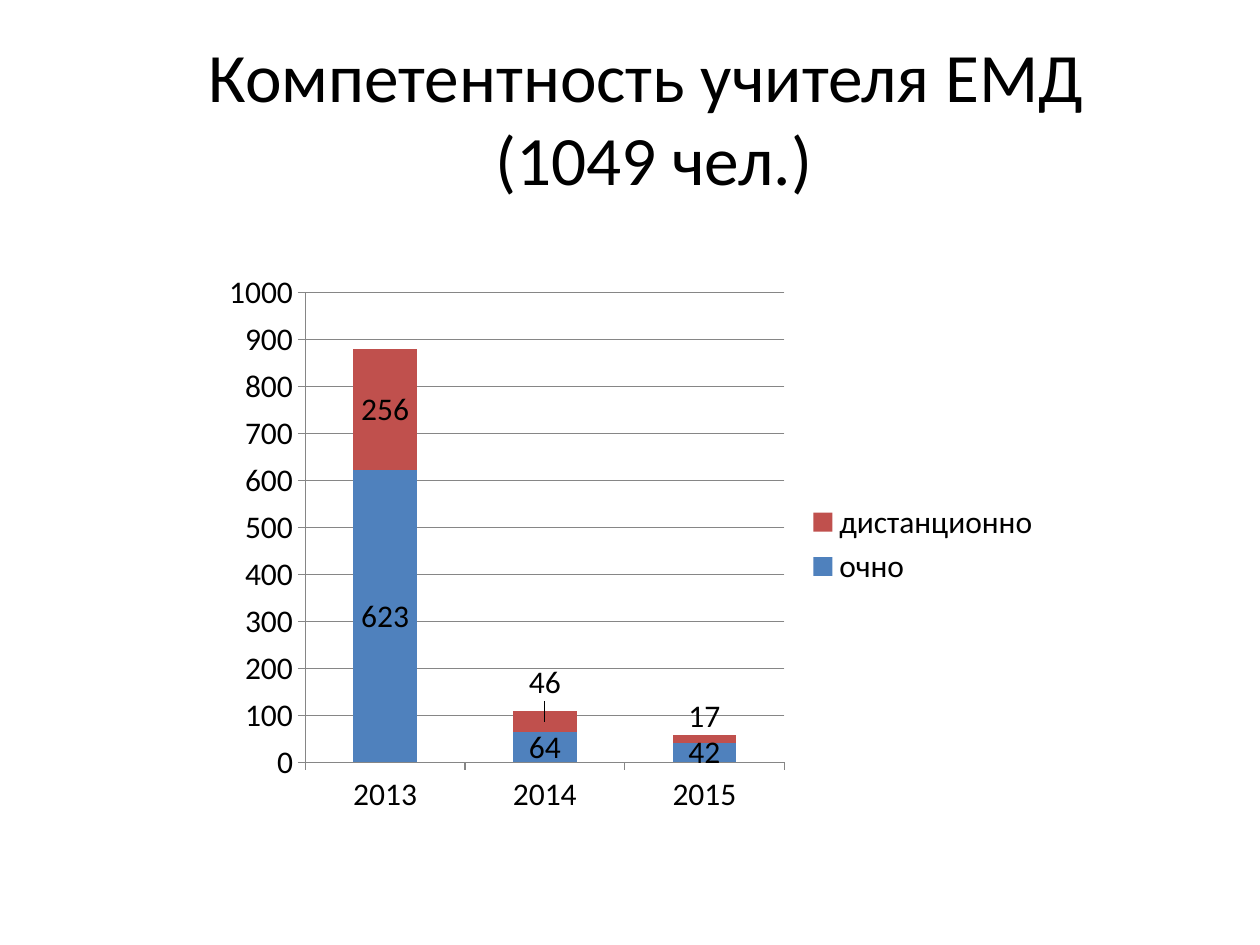
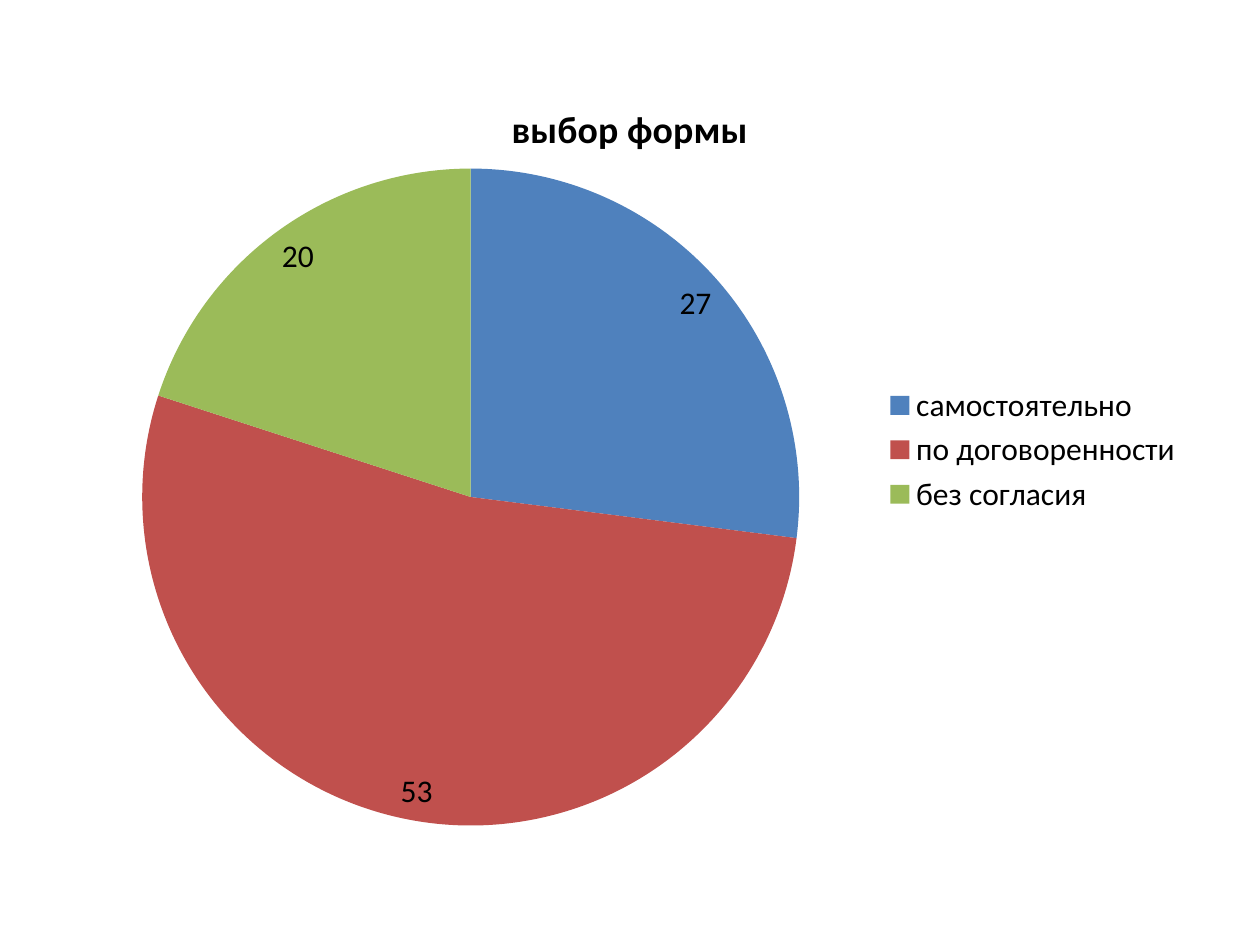
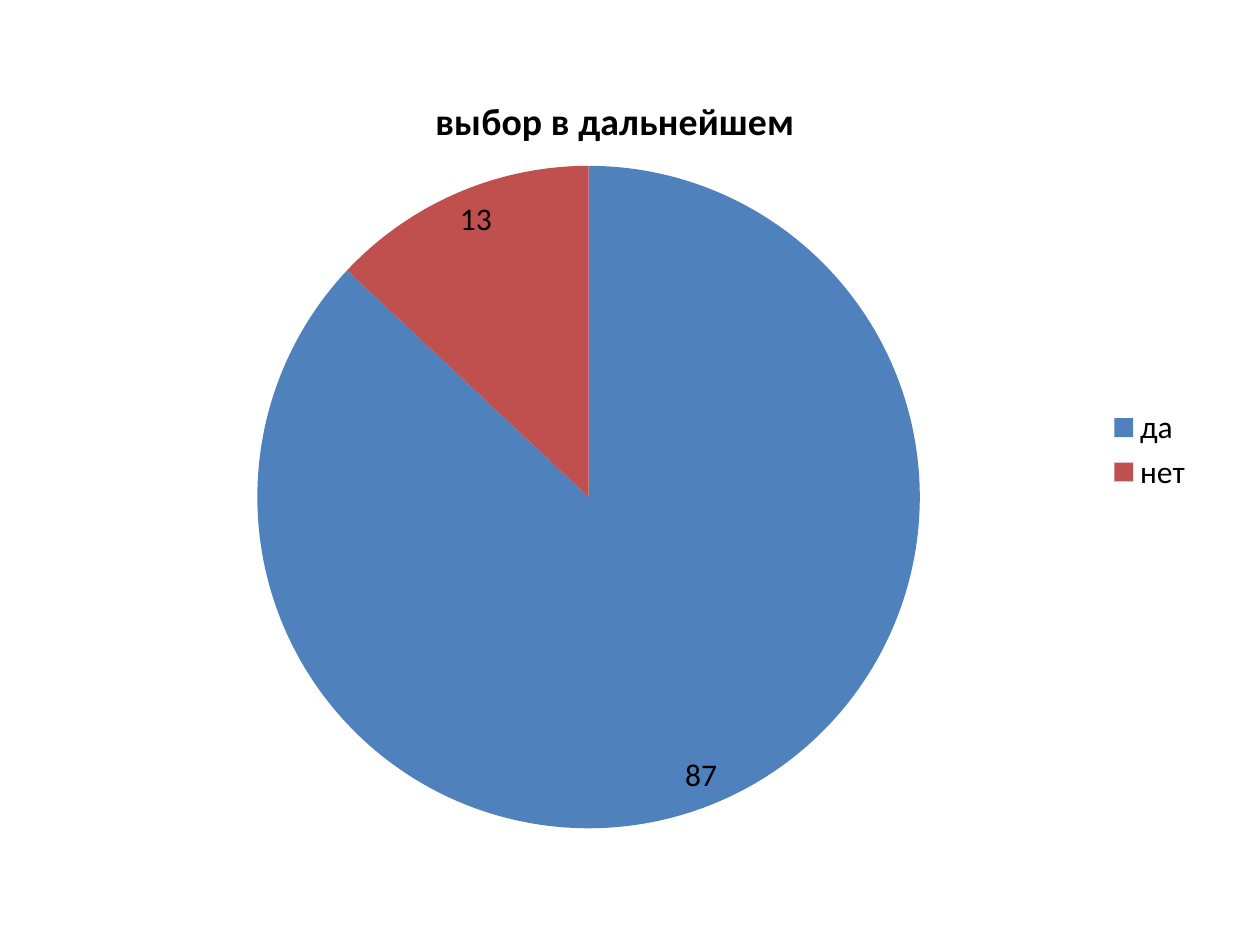
from lxml import etree
from pptx import Presentation
from pptx import util as u
from pptx.chart import data as cd
from pptx.dml import color
from pptx.enum import chart as ce, text
from pptx.oxml import ns

Pt = u.Pt
FONT = "Calibri"
INK, GRID = "000000", "868686"
PALETTE = ["4F81BD", "C0504D", "9BBB59"]


def rgb(value):
    return color.RGBColor.from_string(value)


def style_font(font, size, bold=False):
    font.name, font.size, font.bold = FONT, Pt(size), bold
    font.color.rgb = rgb(INK)


def write(frame, content, size, bold=False, align=text.PP_ALIGN.CENTER):
    paragraph = frame.paragraphs[0]
    paragraph.text = content
    paragraph.alignment = align
    for run in paragraph.runs:
        style_font(run.font, size, bold)


def add_heading(slide, content, left, top, width, height):
    frame = slide.shapes.add_textbox(Pt(left), Pt(top), Pt(width), Pt(height)).text_frame
    frame.word_wrap = True
    frame.vertical_anchor = text.MSO_ANCHOR.MIDDLE
    write(frame, content, 39.6)


def set_layout(element, index, inner=False, **fractions):
    for old in element.findall(ns.qn("c:layout")):
        element.remove(old)
    layout = etree.Element(ns.qn("c:layout"))
    manual = etree.SubElement(layout, ns.qn("c:manualLayout"))
    settings = {"layoutTarget": "inner"} if inner else {}
    if index == 0 or "title" in element.tag:
        settings.update(xMode="edge", yMode="edge")
    for name, value in {**settings, **fractions}.items():
        etree.SubElement(manual, ns.qn(f"c:{name}")).set("val", str(value))
    element.insert(index, layout)


def add_chart(slide, kind, categories, series, frame, plot):
    chart_data = cd.CategoryChartData()
    chart_data.categories = categories
    for name, values in series.items():
        chart_data.add_series(name, values)
    chart = slide.shapes.add_chart(kind, *map(Pt, frame), chart_data).chart
    style_font(chart.font, 18)
    chart.has_title = False
    chart.has_legend = True
    chart.legend.position = ce.XL_LEGEND_POSITION.RIGHT
    chart.legend.include_in_layout = False
    plot_area = chart._chartSpace.chart.plotArea
    set_layout(plot_area, 0, inner=True, **dict(zip("xywh", plot)))
    chart.plots[0].has_data_labels = True
    chart.plots[0].data_labels.show_value = True
    return chart


def paint(parts):
    for part, fill in zip(parts, PALETTE):
        part.format.fill.solid()
        part.format.fill.fore_color.rgb = rgb(fill)


def add_attendance(slide, categories, series, frame, plot, label_shifts):
    chart = add_chart(slide, ce.XL_CHART_TYPE.COLUMN_STACKED, categories, series, frame, plot)
    columns = chart.plots[0]
    columns.gap_width, columns.overlap = 150, 100
    columns.vary_by_categories = False
    paint(columns.series)
    for axis in (chart.category_axis, chart.value_axis):
        axis.major_tick_mark = ce.XL_TICK_MARK.OUTSIDE
        axis.format.line.color.rgb = rgb(GRID)
        axis.format.line.width = Pt(0.75)
    gridlines = chart.value_axis.major_gridlines.format.line
    gridlines.color.rgb = rgb(GRID)
    gridlines.width = Pt(0.75)
    chart.value_axis.maximum_scale, chart.value_axis.major_unit = 1000, 100
    remote = columns.series[1]
    remote.data_labels.show_value = True
    for year, (x, y) in label_shifts.items():
        remote.points[year].data_label.position = ce.XL_LABEL_POSITION.CENTER
        label = remote.data_labels._element.findall(ns.qn("c:dLbl"))[-1]
        set_layout(label, 1, x=x, y=y)


def add_survey(slide, question, answers, frame, plot, title_at):
    chart = add_chart(slide, ce.XL_CHART_TYPE.PIE, list(answers),
                      {question: list(answers.values())}, frame, plot)
    pie = chart.plots[0]
    pie.vary_by_categories = True
    pie.data_labels.position = ce.XL_LABEL_POSITION.INSIDE_END
    paint([pie.series[0].points[i] for i in range(len(answers))])
    chart.has_title = True
    write(chart.chart_title.text_frame, question, 21.6, bold=True)
    set_layout(chart.chart_title._element, 1, **dict(zip("xy", title_at)))


def main():
    deck = Presentation()
    deck.slide_width, deck.slide_height = Pt(720), Pt(540)
    attendance, choice, future = [deck.slides.add_slide(deck.slide_layouts[6]) for _ in range(3)]

    add_heading(attendance, "Компетентность учителя ЕМД \v(1049 чел.)", 36, 21.6, 675.4, 90)
    add_attendance(attendance, ["2013", "2014", "2015"],
                   {"очно": [623, 64, 42], "дистанционно": [256, 46, 17]},
                   (121.7, 151.2, 480.2, 319.7), (0.11, 0.05, 0.57, 0.84),
                   {1: (0, -0.07), 2: (0, -0.04)})
    add_survey(choice, "выбор формы",
               {"самостоятельно": 27, "по договоренности": 53, "без согласия": 20},
               (36, 31.7, 647.3, 450.7), (0.07, 0.14, 0.58, 0.84), (0.39, 0.05))
    add_survey(future, "выбор в дальнейшем", {"да": 87, "нет": 13},
               (36, 31.7, 653, 450.7), (0.17, 0.14, 0.58, 0.84), (0.32, 0.04))
    deck.save("out.pptx")


if __name__ == "__main__":
    main()
